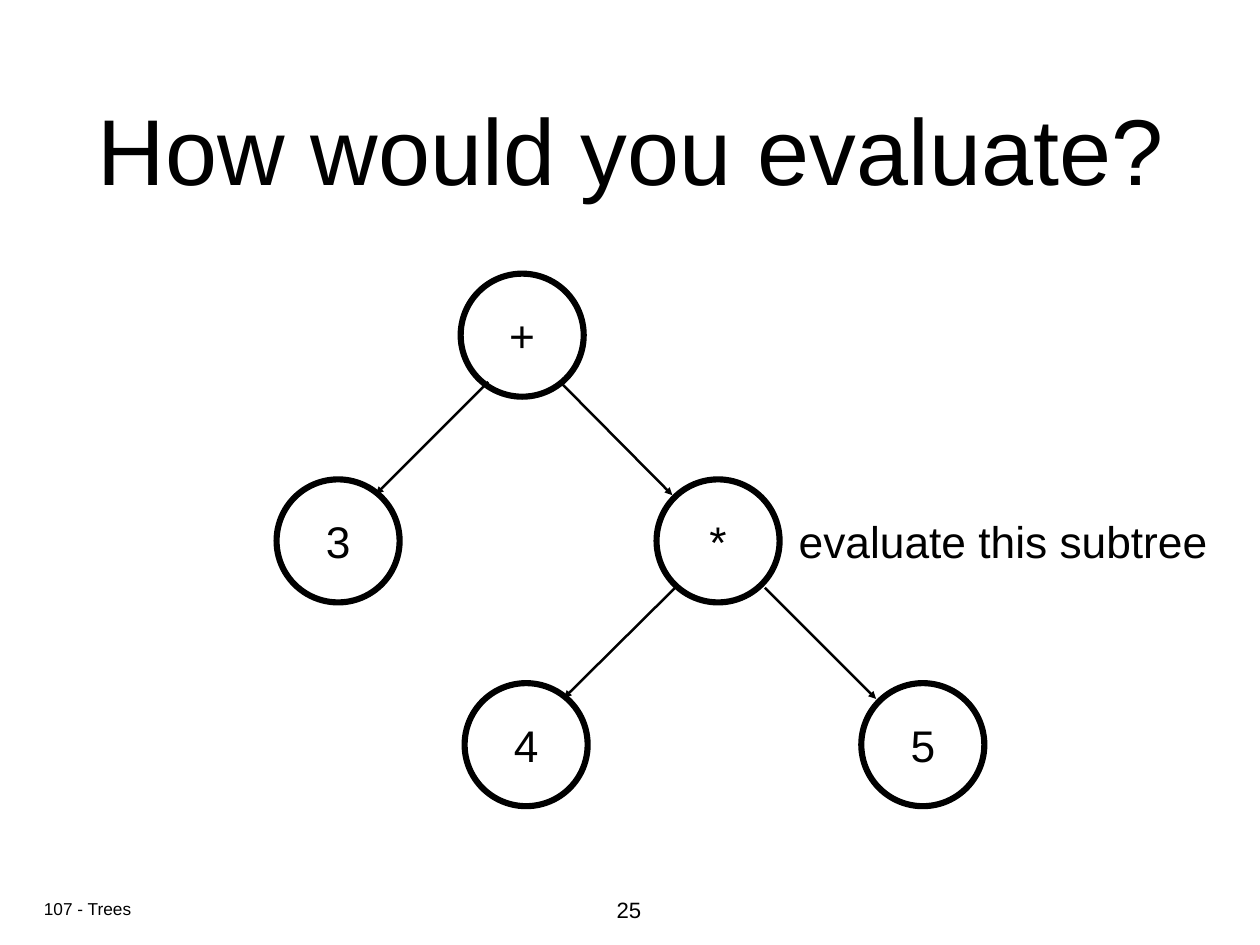
import lxml.etree
import pptx
import pptx.util
import pptx.dml.color
import pptx.enum.shapes
import pptx.enum.text
import pptx.oxml.ns

PX = 10160  # EMU per px, 90 px to the inch
COLORS = {"ink": "000000", "paper": "FFFFFF"}
NODE_SIZE = 125


def color(name):
    return pptx.dml.color.RGBColor.from_string(COLORS[name])


def write(shape, text, size, inset=0, wrap=True, anchor="MIDDLE"):
    frame = shape.text_frame
    frame.text = text
    frame.word_wrap = wrap
    frame.auto_size = pptx.enum.text.MSO_AUTO_SIZE.NONE
    frame.vertical_anchor = pptx.enum.text.MSO_ANCHOR[anchor]
    frame.margin_left = frame.margin_right = inset * PX
    frame.margin_top = frame.margin_bottom = inset * PX
    para = frame.paragraphs[0]
    para.alignment = pptx.enum.text.PP_ALIGN.CENTER
    span = para.runs[0]
    span.font.name = "Arial"
    span.font.size = pptx.util.Pt(size)
    span.font.color.rgb = color("ink")


deck = pptx.Presentation()
deck.slide_width = 1280 * PX
deck.slide_height = 960 * PX
page = deck.slides.add_slide(deck.slide_layouts[5])
page.background.fill.solid()
page.background.fill.fore_color.rgb = color("paper")

# Title
title = page.shapes.title
title.left, title.top, title.width, title.height = 94 * PX, 44 * PX, 1093 * PX, 212 * PX
write(title, "How would you evaluate?", 76)

# Tree nodes
nodes = [
    ("+", 468, 278),
    ("3", 281, 487),
    ("*", 667, 487),
    ("4", 472, 694),
    ("5", 875, 694),
]
for symbol, left, top in nodes:
    node = page.shapes.add_shape(
        pptx.enum.shapes.MSO_SHAPE.OVAL,
        left * PX, top * PX, NODE_SIZE * PX, NODE_SIZE * PX)
    node.shadow.inherit = False
    node.fill.solid()
    node.fill.fore_color.rgb = color("paper")
    node.line.color.rgb = color("ink")
    node.line.width = pptx.util.Pt(5)
    write(node, symbol, 36)

# Arrows from parent to child
edges = [
    (496, 388, 382, 502),
    (570, 389, 683, 503),
    (687, 596, 573, 709),
    (777, 597, 890, 710),
]
for edge in edges:
    arrow = page.shapes.add_connector(
        pptx.enum.shapes.MSO_CONNECTOR.STRAIGHT, *[length * PX for length in edge])
    arrow.line.color.rgb = color("ink")
    arrow.line.width = pptx.util.Pt(2)
    properties = arrow.element.spPr
    outline = properties.find(pptx.oxml.ns.qn("a:ln"))
    lxml.etree.SubElement(outline, pptx.oxml.ns.qn("a:tailEnd"), type="triangle")
    lxml.etree.SubElement(properties, pptx.oxml.ns.qn("a:effectLst"))

# Subtree label, footer and page number
labels = [
    ("evaluate this subtree", 36, 805, 517, 428, 64, 5, "MIDDLE"),
    ("107 - Trees", 14, 39, 907, 100, 32, 5, "MIDDLE"),
    ("25", 18, 621, 911, 36, 38, 0, "TOP"),
]
for text, size, left, top, width, height, inset, anchor in labels:
    box = page.shapes.add_textbox(left * PX, top * PX, width * PX, height * PX)
    write(box, text, size, inset, False, anchor)

deck.save("out.pptx")
